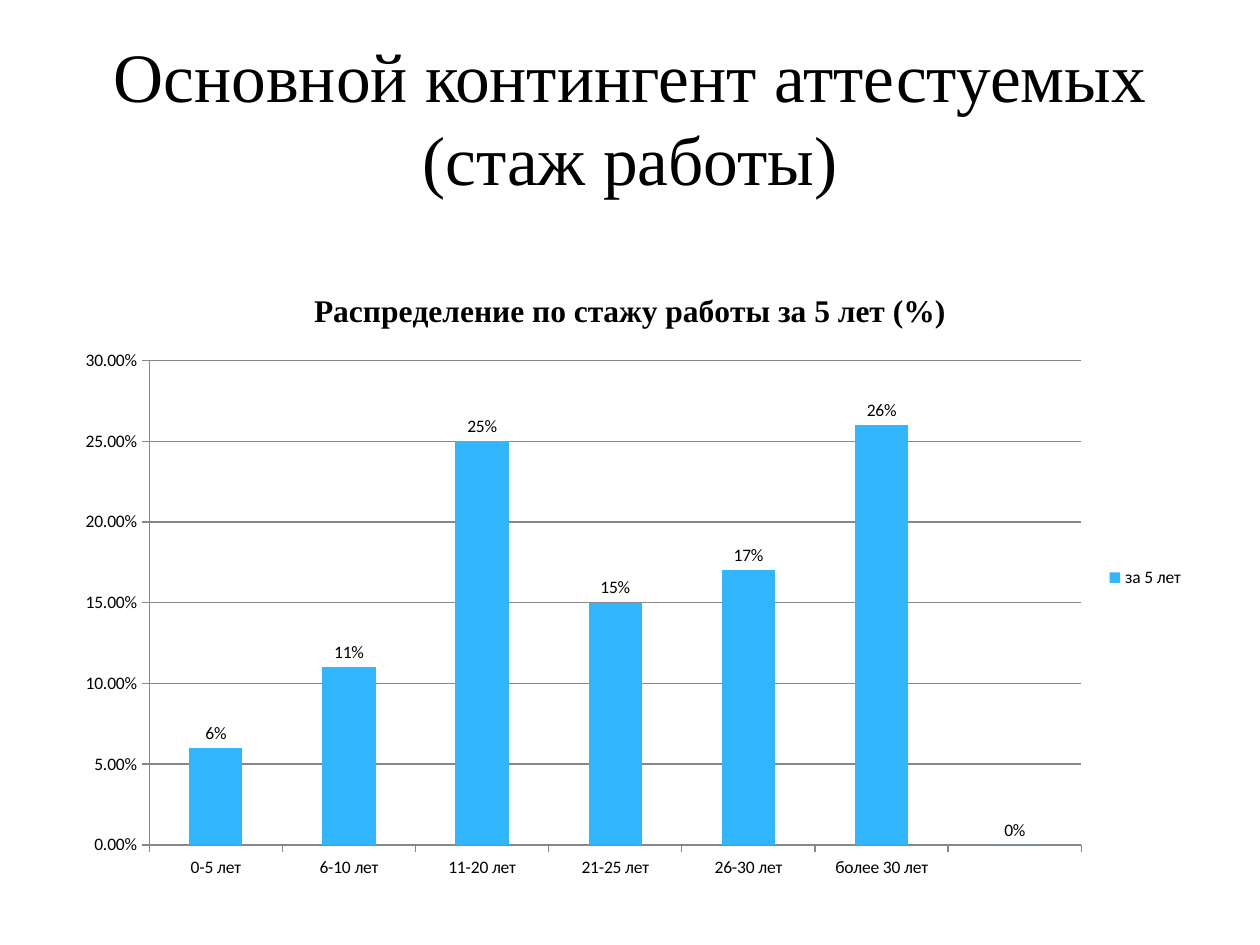
from pptx import Presentation
from pptx.chart.data import CategoryChartData
from pptx.dml.color import RGBColor
from pptx.enum.chart import XL_CHART_TYPE, XL_LABEL_POSITION, XL_LEGEND_POSITION, XL_TICK_MARK
from pptx.enum.text import MSO_ANCHOR, MSO_AUTO_SIZE, PP_ALIGN
from pptx.util import Inches, Pt

COLUMNS = XL_CHART_TYPE.COLUMN_CLUSTERED
OUTSIDE_END = XL_LABEL_POSITION.OUTSIDE_END
LEGEND_RIGHT = XL_LEGEND_POSITION.RIGHT
TICK_OUTSIDE = XL_TICK_MARK.OUTSIDE
MIDDLE = MSO_ANCHOR.MIDDLE
NO_AUTOFIT = MSO_AUTO_SIZE.NONE
CENTER = PP_ALIGN.CENTER

BLACK = RGBColor(0x00, 0x00, 0x00)
GRAY = RGBColor(0x87, 0x87, 0x87)
BLUE = RGBColor(0x31, 0xB6, 0xFD)

TITLE_ONLY_LAYOUT = 5

EXPERIENCE_SHARES = [
    ("0-5 лет", 0.06),
    ("6-10 лет", 0.11),
    ("11-20 лет", 0.25),
    ("21-25 лет", 0.15),
    ("26-30 лет", 0.17),
    ("более 30 лет", 0.26),
    ("", 0),
]


class SlideBuilder:
    heading_font = "Times New Roman"
    chart_font = "Calibri"

    def __init__(self, slide):
        self.slide = slide

    def style_font(self, font, name, size, bold=False):
        font.name = name
        font.size = Pt(size)
        font.bold = bold
        font.color.rgb = BLACK

    def add_title(self, text, left, top, width, height):
        title = self.slide.shapes.title
        title.left, title.top = Inches(left), Inches(top)
        title.width, title.height = Inches(width), Inches(height)
        frame = title.text_frame
        frame.text = text
        frame.word_wrap = True
        frame.auto_size = NO_AUTOFIT
        frame.vertical_anchor = MIDDLE
        paragraph = frame.paragraphs[0]
        paragraph.alignment = CENTER
        self.style_font(paragraph.font, self.heading_font, 39.6)

    def add_column_chart(self, heading, series_name, shares, left, top, width, height):
        data = CategoryChartData(number_format="0%")
        data.categories = [category for category, _ in shares]
        data.add_series(series_name, [share for _, share in shares])
        chart = self.slide.shapes.add_chart(
            COLUMNS, Inches(left), Inches(top), Inches(width), Inches(height), data
        ).chart
        self.style_font(chart.font, self.chart_font, 10)

        chart.has_title = True
        chart.chart_title.include_in_layout = False
        chart.chart_title.text_frame.text = heading
        paragraph = chart.chart_title.text_frame.paragraphs[0]
        self.style_font(paragraph.font, self.heading_font, 18, bold=True)

        chart.has_legend = True
        chart.legend.position = LEGEND_RIGHT
        chart.legend.include_in_layout = False
        self.style_axes(chart)
        self.style_columns(chart.plots[0])

    def style_axes(self, chart):
        for axis in (chart.category_axis, chart.value_axis):
            axis.major_tick_mark = TICK_OUTSIDE
            axis.format.line.color.rgb = GRAY
            axis.format.line.width = Pt(0.75)
        value_axis = chart.value_axis
        value_axis.minimum_scale = 0
        value_axis.maximum_scale = 0.3
        value_axis.major_unit = 0.05
        value_axis.tick_labels.number_format = "0.00%"
        value_axis.tick_labels.number_format_is_linked = False
        value_axis.has_major_gridlines = True
        value_axis.major_gridlines.format.line.color.rgb = GRAY
        value_axis.major_gridlines.format.line.width = Pt(0.75)

    def style_columns(self, plot):
        plot.vary_by_categories = False
        plot.gap_width = 150
        series = plot.series[0]
        series.format.fill.solid()
        series.format.fill.fore_color.rgb = BLUE
        labels = series.data_labels
        labels.show_value = True
        labels.position = OUTSIDE_END
        labels.number_format = "0%"
        labels.number_format_is_linked = False


def main():
    presentation = Presentation()
    presentation.slide_width = Inches(10)
    presentation.slide_height = Inches(7.5)
    layout = presentation.slide_layouts[TITLE_ONLY_LAYOUT]
    builder = SlideBuilder(presentation.slides.add_slide(layout))
    builder.add_title("Основной контингент аттестуемых\v(стаж работы)", 0.5, 0.3, 9, 1.25)
    builder.add_column_chart(
        "Распределение по стажу работы за 5 лет (%)",
        "за 5 лет", EXPERIENCE_SHARES, 0.5, 2.11, 9, 4.95,
    )
    presentation.save("out.pptx")


if __name__ == "__main__":
    main()
